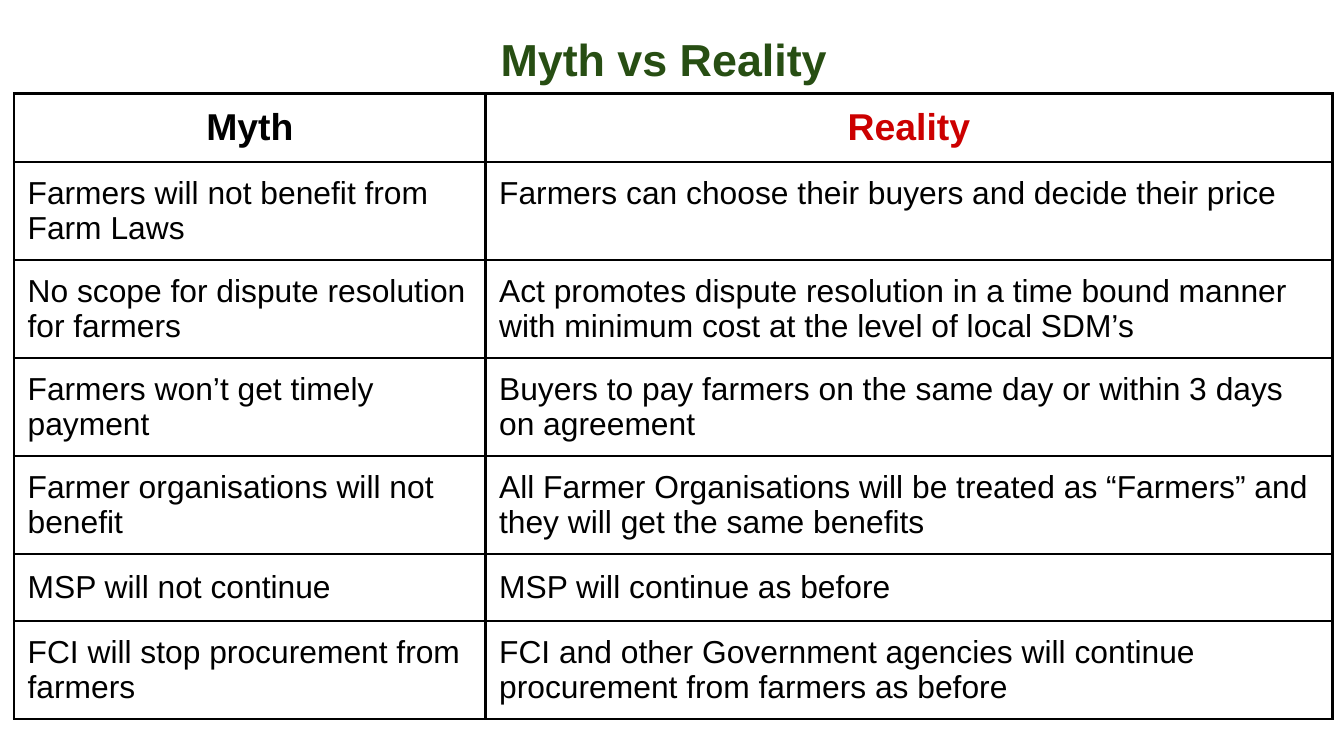
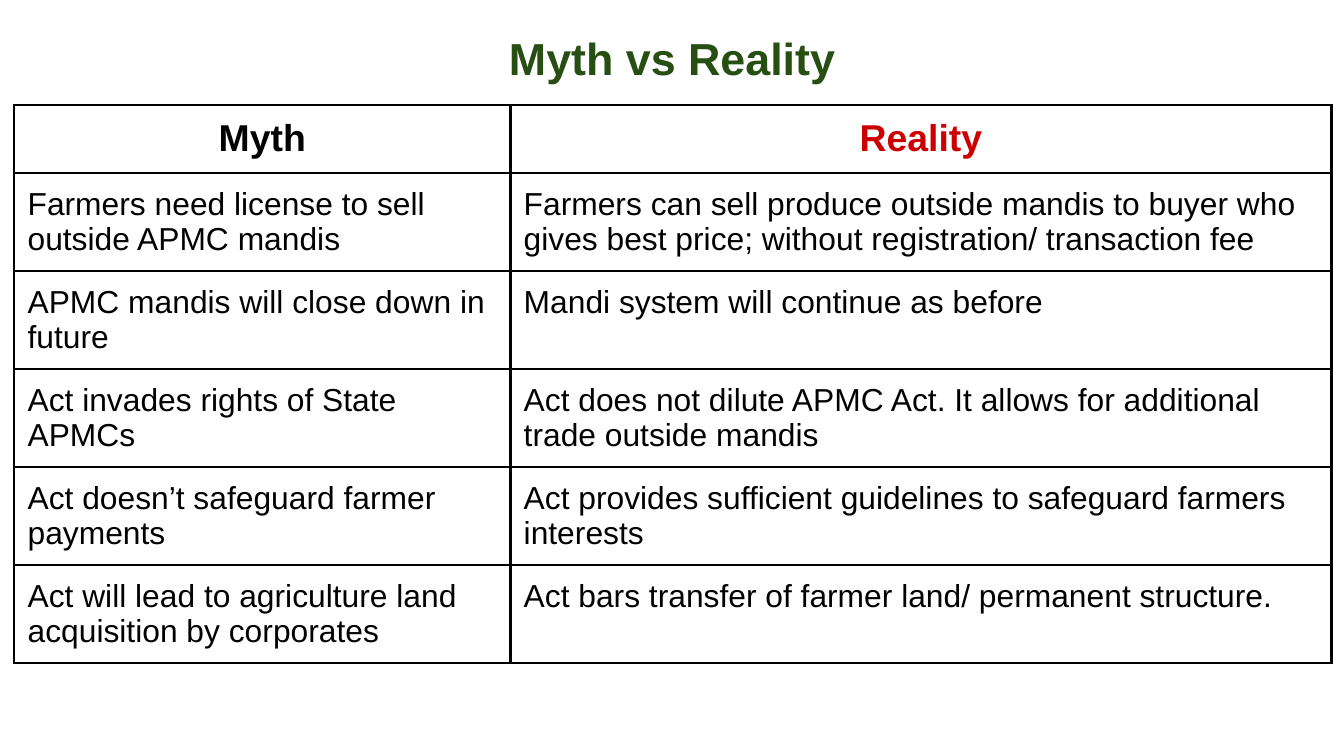
from dataclasses import dataclass

from lxml import etree
from pptx import Presentation
from pptx.dml.color import RGBColor
from pptx.enum.text import MSO_ANCHOR, PP_ALIGN
from pptx.oxml.ns import qn
from pptx.util import Pt

CENTER, LEFT = PP_ALIGN.CENTER, PP_ALIGN.LEFT
TOP, MIDDLE = MSO_ANCHOR.TOP, MSO_ANCHOR.MIDDLE
BORDER_SIDES = ("a:lnL", "a:lnR", "a:lnT", "a:lnB")


@dataclass(frozen=True)
class Theme:
    font: str = "Arial"
    green: str = "274E13"
    red: str = "CC0000"
    black: str = "000000"
    title_size: float = 24
    header_size: float = 20
    body_size: float = 17
    inset: float = 7.2
    header_trim: float = 2.1
    body_trim: float = 2.8
    border: float = 1.5
    single_row: float = 36
    header_row: float = 36.5
    double_row: float = 52.5


class Deck:
    """Holds the theme and the current slide."""

    def __init__(self, theme):
        self.theme = theme
        self.presentation = Presentation()
        self.presentation.slide_width = Pt(720)
        self.presentation.slide_height = Pt(405)
        self.slide = None

    def new_slide(self):
        layout = self.presentation.slide_layouts[6]
        self.slide = self.presentation.slides.add_slide(layout)

    def style(self, paragraph, size, color, bold=False, align=LEFT):
        paragraph.alignment = align
        font = paragraph.font
        font.name, font.size, font.bold = self.theme.font, Pt(size), bold
        font.color.rgb = RGBColor.from_string(color)

    def set_insets(self, target, trim_top=0, trim_bottom=0):
        inset = self.theme.inset
        target.margin_left = target.margin_right = Pt(inset)
        target.margin_top = Pt(inset - trim_top)
        target.margin_bottom = Pt(inset - trim_bottom)

    def title(self, text, left, top):
        box = self.slide.shapes.add_textbox(Pt(left), Pt(top), Pt(671), Pt(45.4))
        frame = box.text_frame
        frame.word_wrap = True
        self.set_insets(frame)
        paragraph = frame.paragraphs[0]
        paragraph.text = text
        paragraph.line_spacing = 1.15
        self.style(paragraph, self.theme.title_size, self.theme.green, True, CENTER)

    def set_borders(self, cell):
        properties = cell._tc.get_or_add_tcPr()
        for side in BORDER_SIDES:
            line = etree.SubElement(properties, qn(side), w=str(Pt(self.theme.border)))
            fill = etree.SubElement(line, qn("a:solidFill"))
            etree.SubElement(fill, qn("a:srgbClr"), val=self.theme.black)

    def cell(self, cell, text, size, color, bold, align, anchor, trim):
        self.set_borders(cell)
        cell.fill.background()
        # Tighten the row without moving the text
        trim_top = trim / 2 if anchor == MIDDLE else 0
        self.set_insets(cell, trim_top, trim - trim_top)
        cell.vertical_anchor = anchor
        paragraph = cell.text_frame.paragraphs[0]
        paragraph.text = text
        self.style(paragraph, size, color, bold, align)

    def myth_table(self, top, widths, claims, single_rows=(), anchor=TOP):
        theme = self.theme
        heights = [theme.header_row] + [
            theme.single_row if number in single_rows else theme.double_row
            for number in range(1, len(claims) + 1)
        ]
        table = self.slide.shapes.add_table(
            len(heights), len(widths), Pt(7.6), Pt(top),
            Pt(sum(widths)), Pt(sum(heights)),
        ).table
        table.first_row = table.horz_banding = False
        for column, width in zip(table.columns, widths):
            column.width = Pt(width)
        for row, height in zip(table.rows, heights):
            row.height = Pt(height)

        # Header row
        headers = (("Myth", theme.black), ("Reality", theme.red))
        for index, (text, color) in enumerate(headers):
            self.cell(table.cell(0, index), text, theme.header_size, color,
                      True, CENTER, MIDDLE, theme.header_trim)

        # Body rows; the first one always starts at the top
        for number, claim in enumerate(claims, start=1):
            for index, text in enumerate(claim):
                self.cell(table.cell(number, index), text, theme.body_size,
                          theme.black, False, LEFT,
                          TOP if number == 1 else anchor, theme.body_trim)


TITLE = "Myth vs Reality"

FARMER_CLAIMS = [
    ("Farmers will not benefit from Farm Laws",
     "Farmers can choose their buyers and decide their price"),
    ("No scope for dispute resolution for farmers",
     "Act promotes dispute resolution in a time bound manner with minimum cost "
     "at the level of local SDM’s"),
    ("Farmers won’t get timely payment",
     "Buyers to pay farmers on the same day or within 3 days on agreement"),
    ("Farmer organisations will not benefit",
     "All Farmer Organisations will be treated as “Farmers” and they will get "
     "the same benefits"),
    ("MSP will not continue", "MSP will continue as before"),
    ("FCI will stop procurement from farmers",
     "FCI and other Government agencies will continue procurement from farmers "
     "as before"),
]

MARKET_CLAIMS = [
    ("Farmers need license to sell outside APMC mandis",
     "Farmers can sell produce outside mandis to buyer who gives best price; "
     "without registration/ transaction fee"),
    ("APMC mandis will close down in future",
     "Mandi system will continue as before"),
    ("Act invades rights of State APMCs",
     "Act does not dilute APMC Act. It allows for additional trade outside mandis"),
    ("Act doesn’t safeguard farmer payments",
     "Act provides sufficient guidelines to safeguard farmers interests"),
    ("Act will lead to agriculture land acquisition by corporates",
     "Act bars transfer of farmer land/ permanent structure."),
]


def main():
    deck = Deck(Theme())

    # Slide 1: farmers' benefits and payments
    deck.new_slide()
    deck.title(TITLE, 20, 5.5)
    deck.myth_table(50.2, (252.6, 453.6), FARMER_CLAIMS, single_rows=(5,), anchor=MIDDLE)

    # Slide 2: markets and land
    deck.new_slide()
    deck.title(TITLE, 24.5, 4.8)
    deck.myth_table(56.2, (265.8, 440), MARKET_CLAIMS)

    deck.presentation.save("out.pptx")


if __name__ == "__main__":
    main()
